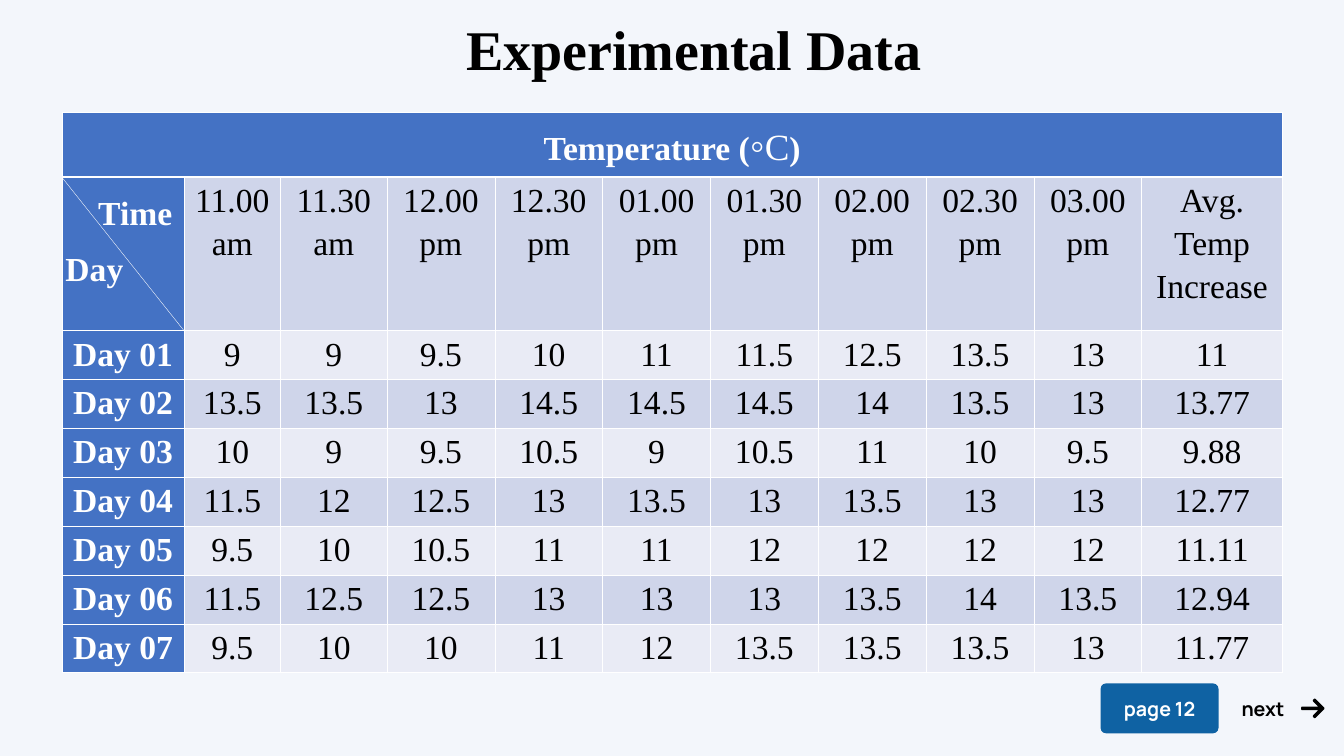
from dataclasses import dataclass

from lxml import etree
from pptx import Presentation, util as u
from pptx.dml.color import RGBColor
from pptx.enum import shapes, text
from pptx.oxml.ns import qn

# Content
TITLE = "Experimental Data"
# Header runs: text, size name, bold, small caps
HEADER = [
    ("Temperature (", "body", True, False),
    ("◦", "degree", True, False),
    ("c", "unit", False, True),
    (")", "body", True, False),
]
TIMES = ["11.00 am", "11.30 am", "12.00 pm", "12.30 pm", "01.00 pm", "01.30 pm",
         "02.00 pm", "02.30 pm", "03.00 pm", "Avg. Temp Increase"]
READINGS = [
    ["9", "9", "9.5", "10", "11", "11.5", "12.5", "13.5", "13", "11"],
    ["13.5", "13.5", "13", "14.5", "14.5", "14.5", "14", "13.5", "13", "13.77"],
    ["10", "9", "9.5", "10.5", "9", "10.5", "11", "10", "9.5", "9.88"],
    ["11.5", "12", "12.5", "13", "13.5", "13", "13.5", "13", "13", "12.77"],
    ["9.5", "10", "10.5", "11", "11", "12", "12", "12", "12", "11.11"],
    ["11.5", "12.5", "12.5", "13", "13", "13", "13.5", "14", "13.5", "12.94"],
    ["9.5", "10", "10", "11", "12", "13.5", "13.5", "13.5", "13", "11.77"],
]

# Layout, in px (100 to the inch)
PX = 9144
SLIDE = (2667, 1500)
TITLE_BOX = (915, 23, 958, 145)
TABLE_AT = (123, 222)
COLS = [242, 192, 211] + [214] * 7 + [279]
ROWS = [130, 304] + [97] * len(READINGS)
CELL_INSET = 7
TIME_INDENT = 65
PAGE_BUTTON = (2184, 1356, 234, 99)
NEXT_BOX = (2454, 1377, 172, 57)
ARROW_AT = (2582, 1386)
ARROW_HEIGHT = 39
ARROW_TOP = [(0, 18), (1, 16), (3, 16), (34, 16), (24, 6), (23, 4), (24, 2),
             (26, 0), (27, 0), (29, 1), (46, 18)]


@dataclass(frozen=True)
class Theme:
    background: str = "F3F6FB"
    button: str = "0F62A3"
    header: str = "4472C4"
    bands: tuple = ("CFD5EA", "E9EBF5")
    white: str = "FFFFFF"
    black: str = "000000"
    serif: str = "Times New Roman"
    sans: str = "Manrope"
    title: int = 80
    body: int = 48
    degree: int = 60
    unit: int = 66
    nav: int = 28


T = Theme()


def emu(*px):
    return [round(v * PX) for v in px]


def paint(obj, color):
    obj.fill.solid()
    obj.fill.fore_color.rgb = RGBColor.from_string(color)


def style(p, face, size, color, bold=False, align=text.PP_ALIGN.LEFT, spacing=None):
    p.alignment = align
    if spacing:
        p.line_spacing = spacing
    p.font.name, p.font.size, p.font.bold = face, u.Pt(size), bold
    p.font.color.rgb = RGBColor.from_string(color)


def border(cell, bottom=1):
    tcPr = cell._tc.get_or_add_tcPr()
    for tag, width in (("a:lnL", 1), ("a:lnR", 1), ("a:lnT", 1), ("a:lnB", bottom)):
        ln = etree.SubElement(tcPr, qn(tag), w=str(u.Pt(width)))
        fill = etree.SubElement(ln, qn("a:solidFill"))
        etree.SubElement(fill, qn("a:srgbClr"), val=T.white)


def format_cell(cell, fill, bottom=1):
    cell.margin_left = cell.margin_right = CELL_INSET * PX
    cell.margin_top = cell.margin_bottom = 0
    border(cell, bottom)
    paint(cell, fill)


def cell_text(cell, words, color, bold):
    p = cell.text_frame.paragraphs[0]
    p.text = words
    style(p, T.serif, T.body, color, bold, text.PP_ALIGN.CENTER, 1.15)


def add_label(s, box, words, face, size):
    tf = s.shapes.add_textbox(*emu(*box)).text_frame
    tf.word_wrap = True
    tf.vertical_anchor = text.MSO_ANCHOR.MIDDLE
    tf.margin_top = tf.margin_bottom = 0
    p = tf.paragraphs[0]
    p.text = words
    style(p, face, size, T.black, True)


def add_readings_table(s):
    size = (sum(COLS), sum(ROWS))
    table = s.shapes.add_table(len(ROWS), len(COLS), *emu(*TABLE_AT, *size)).table
    table.first_row = table.horz_banding = False
    for col, width in zip(table.columns, COLS):
        col.width = width * PX
    for row, height in zip(table.rows, ROWS):
        row.height = height * PX

    # Header across all columns
    for c in range(len(COLS)):
        format_cell(table.cell(0, c), T.header, 3)
    head = table.cell(0, 0)
    head.merge(table.cell(0, len(COLS) - 1))
    p = head.text_frame.paragraphs[0]
    style(p, T.serif, T.body, T.white, True, text.PP_ALIGN.CENTER, 1.15)
    for words, size_name, bold, small_caps in HEADER:
        r = p.add_run()
        r.text = words
        r.font.size, r.font.bold = u.Pt(getattr(T, size_name)), bold
        if small_caps:
            r.font._element.set("cap", "small")

    # Times and daily readings
    days = [f"Day {n:02}" for n in range(1, len(READINGS) + 1)]
    lines = [[None] + TIMES] + [[day] + row for day, row in zip(days, READINGS)]
    for i, line in enumerate(lines):
        for c, words in enumerate(line):
            cell = table.cell(i + 1, c)
            format_cell(cell, T.bands[i % 2] if c else T.header)
            if words:
                cell_text(cell, words, T.black if c else T.white, c == 0)

    # Corner cell, split by a diagonal
    tf = table.cell(1, 0).text_frame
    tf.text = "Time\nDay"
    for p in tf.paragraphs:
        style(p, T.serif, T.body, T.white, True, spacing=1.5)
    pPr = tf.paragraphs[0]._p.get_or_add_pPr()
    pPr.set("marL", str(TIME_INDENT * PX))
    pPr.set("indent", "0")
    left, top = TABLE_AT[0], TABLE_AT[1] + ROWS[0]
    line = s.shapes.add_connector(shapes.MSO_CONNECTOR.STRAIGHT, *emu(
        left, top, left + COLS[0], top + ROWS[1]))
    line.line.width = u.Pt(0.5)
    line.line.color.rgb = RGBColor.from_string(T.white)
    etree.SubElement(line._element.spPr, qn("a:effectLst"))


def add_navigation(s):
    button = s.shapes.add_shape(shapes.MSO_SHAPE.ROUNDED_RECTANGLE, *emu(*PAGE_BUTTON))
    button.adjustments[0] = 0.11
    button.shadow.inherit = False
    button.line.fill.background()
    paint(button, T.button)
    button.text_frame.vertical_anchor = text.MSO_ANCHOR.MIDDLE
    p = button.text_frame.paragraphs[0]
    p.text = "page 12"
    style(p, T.sans, T.nav, T.white, True, text.PP_ALIGN.CENTER)
    add_label(s, NEXT_BOX, "next", T.sans, T.nav)

    # The arrow's lower half mirrors its upper half
    points = ARROW_TOP + [(x, ARROW_HEIGHT - y) for x, y in reversed(ARROW_TOP)]
    outline = s.shapes.build_freeform(*points[0], scale=PX)
    outline.add_line_segments(points[1:], close=True)
    arrow = outline.convert_to_shape(*emu(*ARROW_AT))
    arrow.shadow.inherit = False
    arrow.line.fill.background()
    paint(arrow, T.black)


def main():
    prs = Presentation()
    prs.slide_width, prs.slide_height = emu(*SLIDE)
    s = prs.slides.add_slide(prs.slide_layouts[6])
    paint(s.background, T.background)
    add_label(s, TITLE_BOX, TITLE, T.serif, T.title)
    add_readings_table(s)
    add_navigation(s)
    prs.save("out.pptx")


if __name__ == "__main__":
    main()
